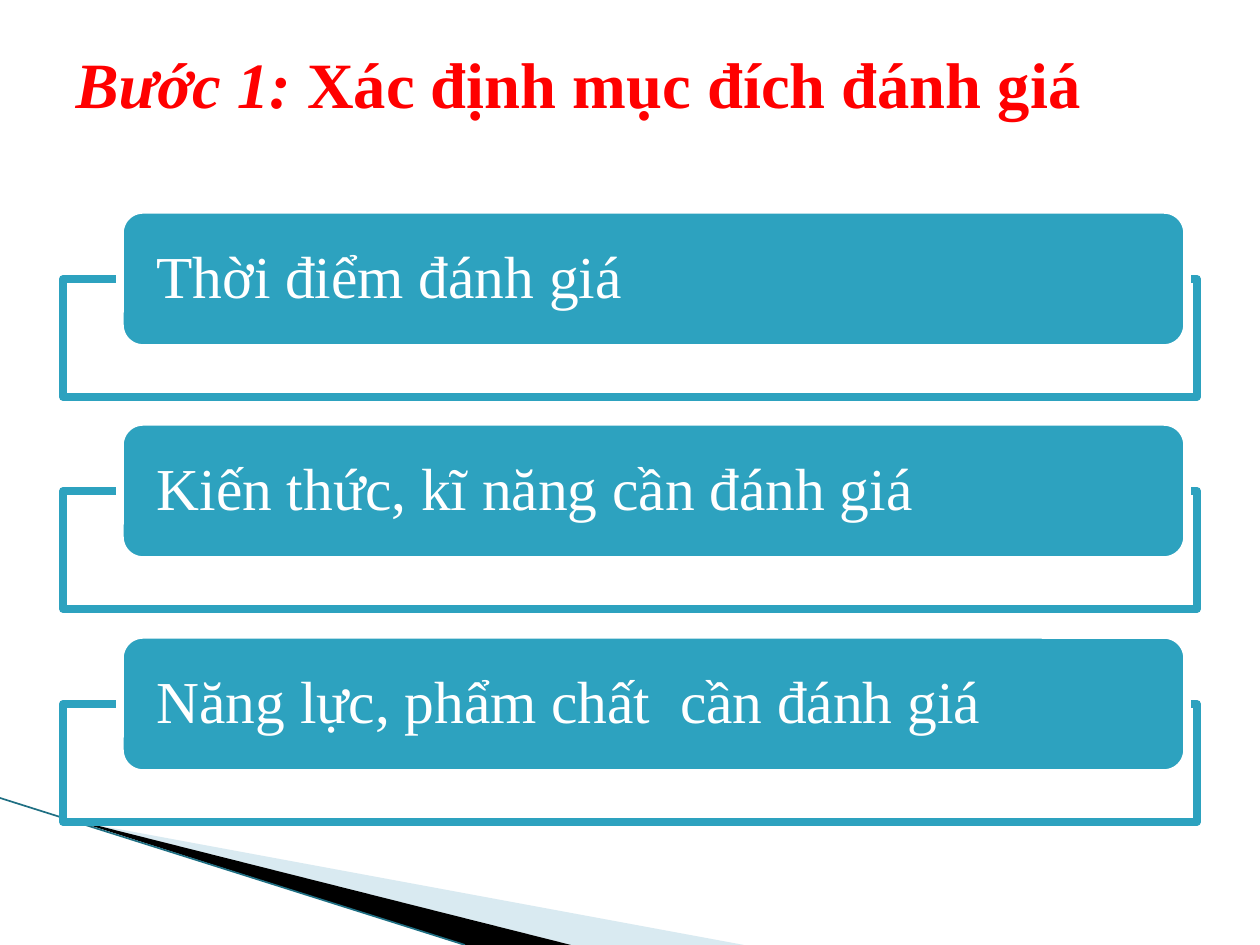
import pptx
import pptx.util
import pptx.dml.color
import pptx.enum.shapes
import pptx.enum.text
import pptx.oxml
import pptx.oxml.ns

PX = 914400 // 126
FONT = "Times New Roman"
TEAL, WHITE, RED = "2DA2BF", "FFFFFF", "FF0000"
STEPS = [
    "Thời điểm đánh giá",
    "Kiến thức, kĩ năng cần đánh giá",
    "Năng lực, phẩm chất  cần đánh giá",
]


def rgb(color):
    return pptx.dml.color.RGBColor.from_string(color)


def add_xml(parent, tag, **attrs):
    el = pptx.oxml.parse_xml(f"<a:{tag} {pptx.oxml.ns.nsdecls('a')}/>")
    for name, value in attrs.items():
        el.set(name, str(value))
    parent.append(el)


class Deck:
    def __init__(self):
        self.prs = pptx.Presentation()
        self.prs.slide_width = pptx.util.Inches(10)
        self.prs.slide_height = pptx.util.Inches(7.5)
        self.s = self.prs.slides.add_slide(self.prs.slide_layouts[5])

    def fill(self, sp, color, alpha=100):
        sp.shadow.inherit = False
        sp.fill.solid()
        sp.fill.fore_color.rgb = rgb(color)
        if alpha < 100:
            clr = sp.fill._xPr.find(".//" + pptx.oxml.ns.qn("a:srgbClr"))
            add_xml(clr, "alpha", val=alpha * 1000)

    def outline(self, sp, color, width):
        sp.line.color.rgb = rgb(color)
        sp.line.width = pptx.util.Pt(width)

    def wedge(self, points, color, alpha=100):
        fb = self.s.shapes.build_freeform(*points[0], scale=PX)
        fb.add_line_segments(points[1:], close=True)
        sp = fb.convert_to_shape()
        self.fill(sp, color, alpha)
        sp.line.fill.background()

    def line(self, x1, y1, x2, y2, color, width):
        sp = self.s.shapes.add_connector(
            pptx.enum.shapes.MSO_CONNECTOR.STRAIGHT, *(v * PX for v in (x1, y1, x2, y2)))
        self.outline(sp, color, width)
        add_xml(sp._element.spPr, "effectLst")

    def box(self, kind, x, y, w, h, color, line, alpha=100):
        sp = self.s.shapes.add_shape(kind, x * PX, y * PX, w * PX, h * PX)
        self.fill(sp, color, alpha)
        self.outline(sp, line, 4.33)
        add_xml(sp.line._get_or_add_ln(), "round")
        return sp

    def label(self, sp, text, size, color, inset):
        tf = sp.text_frame
        tf.word_wrap = True
        tf.vertical_anchor = pptx.enum.text.MSO_ANCHOR.MIDDLE
        tf.margin_left = tf.margin_right = inset * PX
        tf.margin_top = tf.margin_bottom = 0
        p = tf.paragraphs[0]
        p.text = text
        p.alignment = pptx.enum.text.PP_ALIGN.LEFT
        p.line_spacing = 0.9
        p.font.name, p.font.size = FONT, pptx.util.Pt(size)
        p.font.color.rgb = rgb(color)

    def title(self, x, y, w, h, lead, rest):
        sp = self.s.shapes.title
        sp.left, sp.top, sp.width, sp.height = (v * PX for v in (x, y, w, h))
        tf = sp.text_frame
        tf.word_wrap = True
        tf.auto_size = pptx.enum.text.MSO_AUTO_SIZE.NONE
        tf.vertical_anchor = pptx.enum.text.MSO_ANCHOR.TOP
        p = tf.paragraphs[0]
        p.alignment = pptx.enum.text.PP_ALIGN.LEFT
        p.font.name, p.font.size = FONT, pptx.util.Pt(36.9)
        p.font.bold = True
        p.font.color.rgb = rgb(RED)
        for text, italic in ((lead, True), (rest, False)):
            r = p.add_run()
            r.text = text
            r.font.italic = italic


def main():
    deck = Deck()
    shape = pptx.enum.shapes.MSO_SHAPE

    # Corner decoration
    deck.wedge([(69, 820), (744, 945), (571, 945), (69, 819)], "A0CBDC", 40)
    deck.wedge([(67, 818), (571, 945), (464, 945)], "000000")
    deck.line(0, 798, 465, 945, "1F6F83", 0.95)

    # Title
    deck.title(63, 38, 1134, 158, "Bước 1: ", "Xác định mục đích đánh giá")

    # Three framed steps at an equal pitch
    for i, text in enumerate(STEPS):
        y = 210 + round(i * 212.5)
        deck.box(shape.RECTANGLE, 63, y + 69, 1134, 118, WHITE, TEAL, 90)
        sp = deck.box(shape.ROUNDED_RECTANGLE, 120, y, 1067, 138, TEAL, WHITE)
        deck.label(sp, text, 34, WHITE, 30)

    deck.prs.save("out.pptx")


if __name__ == "__main__":
    main()
